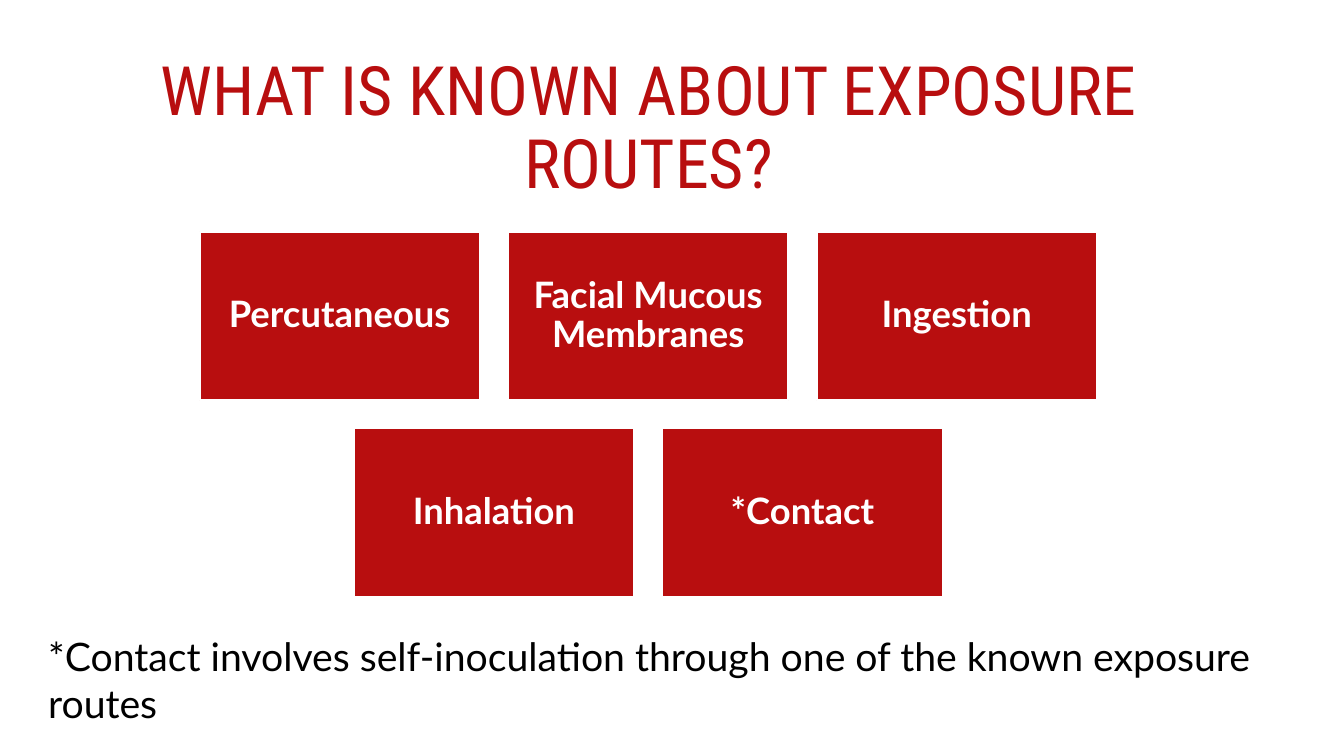
from pptx import Presentation
from pptx.dml.color import RGBColor
from pptx.enum.shapes import MSO_SHAPE as Shape
from pptx.enum.text import MSO_ANCHOR as Anchor, MSO_AUTO_SIZE as AutoSize, PP_ALIGN as Align
from pptx.util import Inches, Pt

RED = RGBColor(0xB8, 0x0E, 0x0F)
WHITE = RGBColor(0xFF, 0xFF, 0xFF)
BLACK = RGBColor(0x00, 0x00, 0x00)

ROUTE_ROWS = [
    ["Percutaneous", "Facial Mucous Membranes", "Ingestion"],
    ["Inhalation", "*Contact"],
]
TILE_W, TILE_H, GAP = 2.78, 1.67, 0.28


def set_font(p, name, size, color, bold=False):
    p.font.name = name
    p.font.size = Pt(size)
    p.font.color.rgb = color
    p.font.bold = bold


def add_title(slide, left, top, width, height):
    title = slide.shapes.title
    title.left, title.top = Inches(left), Inches(top)
    title.width, title.height = Inches(width), Inches(height)
    tf = title.text_frame
    tf.text = "WHAT IS KNOWN ABOUT EXPOSURE ROUTES?"
    tf.word_wrap = True
    tf.auto_size = AutoSize.NONE
    tf.vertical_anchor = Anchor.MIDDLE
    p = tf.paragraphs[0]
    p.alignment = Align.CENTER
    p.line_spacing = 0.9
    set_font(p, "Roboto Condensed", 48.6, RED)


def add_tile(slide, text, left, top):
    sp = slide.shapes.add_shape(Shape.RECTANGLE, Inches(left), Inches(top),
                                Inches(TILE_W), Inches(TILE_H))
    sp.shadow.inherit = False
    sp.fill.solid()
    sp.fill.fore_color.rgb = RED
    sp.line.color.rgb = WHITE
    sp.line.width = Pt(1.5)
    tf = sp.text_frame
    tf.text = text
    tf.word_wrap = True
    tf.vertical_anchor = Anchor.MIDDLE
    tf.margin_left = tf.margin_right = Inches(0.11)
    tf.margin_top = tf.margin_bottom = Inches(0.11)
    p = tf.paragraphs[0]
    p.alignment = Align.CENTER
    p.line_spacing = 0.9
    set_font(p, "Lato", 26, WHITE, bold=True)


def add_routes(slide, left, top, width):
    """Rows of tiles, each row centred in the given width."""
    for i, row in enumerate(ROUTE_ROWS):
        row_w = len(row) * (TILE_W + GAP) - GAP
        row_left = left + (width - row_w) / 2
        for j, text in enumerate(row):
            add_tile(slide, text, row_left + j * (TILE_W + GAP), top + i * (TILE_H + GAP))


def add_footnote(slide, left, top, width, height):
    box = slide.shapes.add_textbox(Inches(left), Inches(top), Inches(width), Inches(height))
    tf = box.text_frame
    tf.text = "*Contact involves self-inoculation through one of the known exposure routes"
    tf.word_wrap = True
    tf.auto_size = AutoSize.SHAPE_TO_FIT_TEXT
    set_font(tf.paragraphs[0], "Lato", 28, BLACK)


def main():
    prs = Presentation()
    prs.slide_width, prs.slide_height = Inches(13.33), Inches(7.5)
    slide = prs.slides.add_slide(prs.slide_layouts[5])  # Title Only
    add_title(slide, 0.75, 0.46, 11.37, 1.66)
    add_routes(slide, 1.98, 2.3, 8.9)
    add_footnote(slide, 0.38, 6.22, 12.63, 1.04)
    prs.save("out.pptx")


if __name__ == "__main__":
    main()
